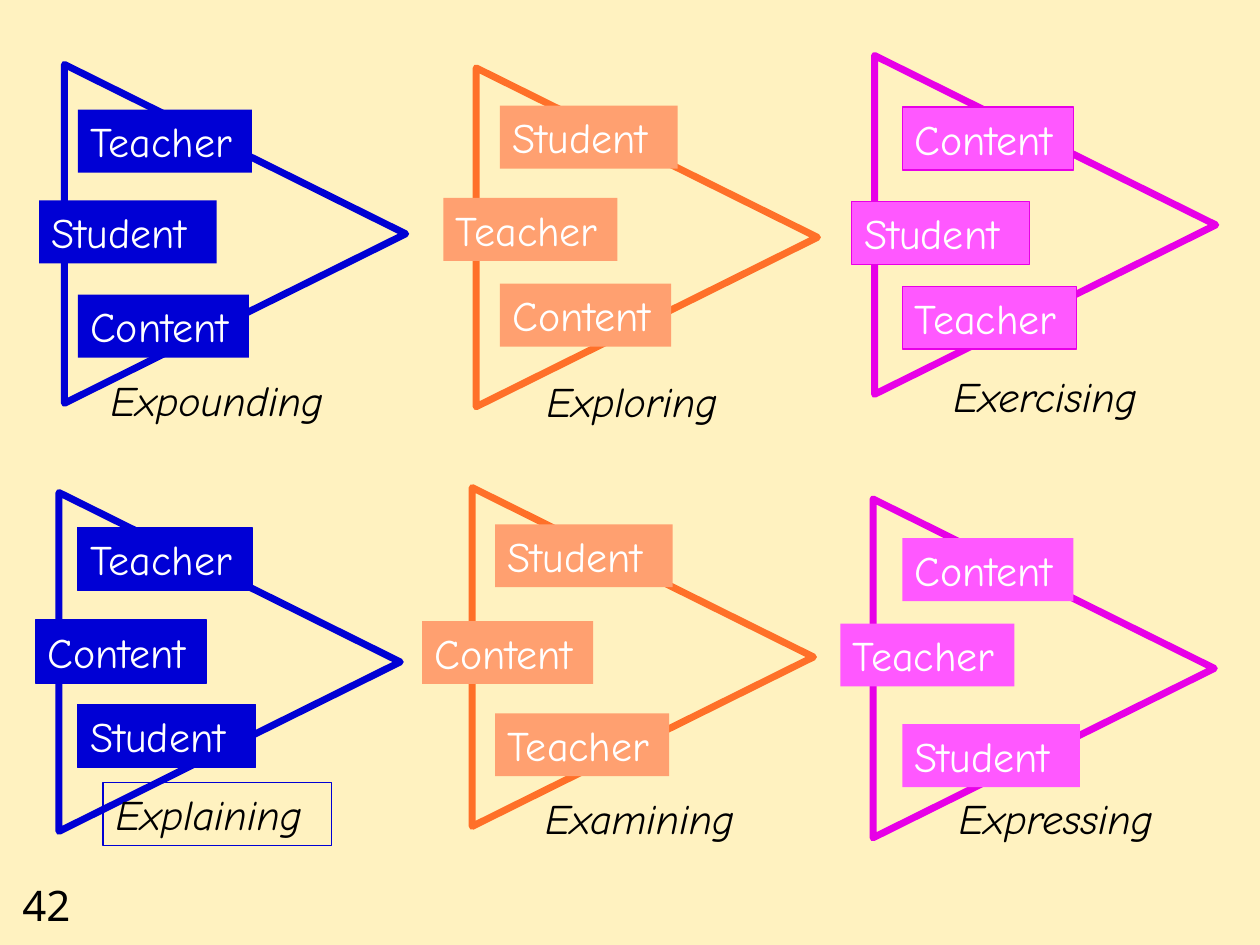
from lxml.etree import SubElement
from pptx import Presentation
from pptx.dml.color import RGBColor
from pptx.enum.shapes import MSO_SHAPE as Shape
from pptx.enum.text import MSO_ANCHOR as Anchor, PP_ALIGN as Align
from pptx.oxml.ns import qn
from pptx.util import Cm, Pt

COLORS = {
    "background": "FFF2C0", "black": "000000", "white": "FFFFFF",
    "blue": "0000D4", "blue label": "0000D5",
    "orange": "FF7029", "orange label": "FFA070",
    "magenta": "E700E7", "magenta label": "FF58FF",
}
LABEL_WIDTHS = {"Teacher": 3.51, "Student": 3.58, "Content": 3.45}
LABEL_HEIGHT = 1.27
TRIANGLE_WIDTH, TRIANGLE_HEIGHT = 6.88, 6.83

# One mode of interaction each, lengths in cm. The top and bottom labels
# share the left edge "outer"; the middle one starts at "inner".
MODES = [
    dict(name="Expounding", color="blue", corner=(1.3, 1.3),
         labels=["Teacher", "Student", "Content"], tops=[2.21, 4.04, 5.94],
         outer=1.57, inner=0.79, caption=(1.98, 7.42, 6.15)),
    dict(name="Examining", color="orange", corner=(9.52, 9.83),
         labels=["Student", "Content", "Teacher"], tops=[10.57, 12.52, 14.38],
         outer=9.98, inner=8.51, caption=(10.74, 15.85, 4.57)),
    dict(name="Expressing", color="magenta", corner=(17.6, 10.06),
         labels=["Content", "Teacher", "Student"], tops=[10.85, 12.57, 14.6],
         outer=18.19, inner=16.94, caption=(19.08, 15.85, 4.83)),
    dict(name="Explaining", color="blue", corner=(1.19, 9.93),
         labels=["Teacher", "Content", "Student"], tops=[10.64, 12.5, 14.2],
         outer=1.57, inner=0.71, caption=(2.08, 15.77, 4.6),
         label_line="blue", caption_line="blue"),
    dict(name="Exploring", color="orange", corner=(9.6, 1.37),
         labels=["Student", "Teacher", "Content"], tops=[2.13, 3.99, 5.72],
         outer=10.08, inner=8.94, caption=(10.77, 7.44, 4.32)),
    dict(name="Exercising", color="magenta", corner=(17.63, 1.12),
         labels=["Content", "Student", "Teacher"], tops=[2.16, 4.06, 5.77],
         outer=18.19, inner=17.17, caption=(18.97, 7.34, 4.67),
         label_line="magenta"),
]


def rgb(name):
    return RGBColor.from_string(COLORS[name])


def style_shape(shape, fill=None, line=None, weight=0.75):
    shape.shadow.inherit = False
    if fill:
        shape.fill.solid()
        shape.fill.fore_color.rgb = rgb(fill)
    else:
        shape.fill.background()
    if line:
        shape.line.color.rgb = rgb(line)
        shape.line.width = Pt(weight)
    else:
        shape.line.fill.background()


def add_text(shapes, text, left, top, width, color="black", font="Comic Neue",
             italic=False, fill=None, line=None):
    box = shapes.add_shape(Shape.RECTANGLE, Cm(left), Cm(top), Cm(width), Cm(LABEL_HEIGHT))
    style_shape(box, fill, line)
    frame = box.text_frame
    frame.word_wrap = True
    frame.vertical_anchor = Anchor.TOP
    para = frame.paragraphs[0]
    para.alignment = Align.LEFT
    span = para.add_run()
    span.text = text
    span.font.name = font
    span.font.size = Pt(24)
    span.font.italic = italic
    span.font.color.rgb = rgb(color)


def add_triangle(shapes, left, top, color):
    outline = shapes.build_freeform(Cm(left), Cm(top))
    outline.add_line_segments([
        (Cm(left), Cm(top + TRIANGLE_HEIGHT)),
        (Cm(left + TRIANGLE_WIDTH), Cm(top + TRIANGLE_HEIGHT / 2)),
    ], close=True)
    triangle = outline.convert_to_shape()
    style_shape(triangle, line=color, weight=4)
    SubElement(triangle.line._get_or_add_ln(), qn("a:round"))


def add_mode(page, mode):
    shapes = page.shapes.add_group_shape().shapes
    add_triangle(shapes, *mode["corner"], mode["color"])
    lefts = [mode["outer"], mode["inner"], mode["outer"]]
    for label, left, top in zip(mode["labels"], lefts, mode["tops"]):
        add_text(shapes, label, left, top, LABEL_WIDTHS[label], color="white",
                 fill=mode["color"] + " label", line=mode.get("label_line"))
    add_text(shapes, mode["name"], *mode["caption"], italic=True,
             line=mode.get("caption_line"))


def main():
    deck = Presentation()
    deck.slide_width, deck.slide_height = Cm(25.4), Cm(19.05)
    page = deck.slides.add_slide(deck.slide_layouts[6])
    page.background.fill.solid()
    page.background.fill.fore_color.rgb = rgb("background")

    # Page number
    add_text(page.shapes, "42", 0.2, 17.6, 1.9, font="Noto Sans")

    # Six triangles with their labels
    for mode in MODES:
        add_mode(page, mode)
    deck.save("out.pptx")


if __name__ == "__main__":
    main()
